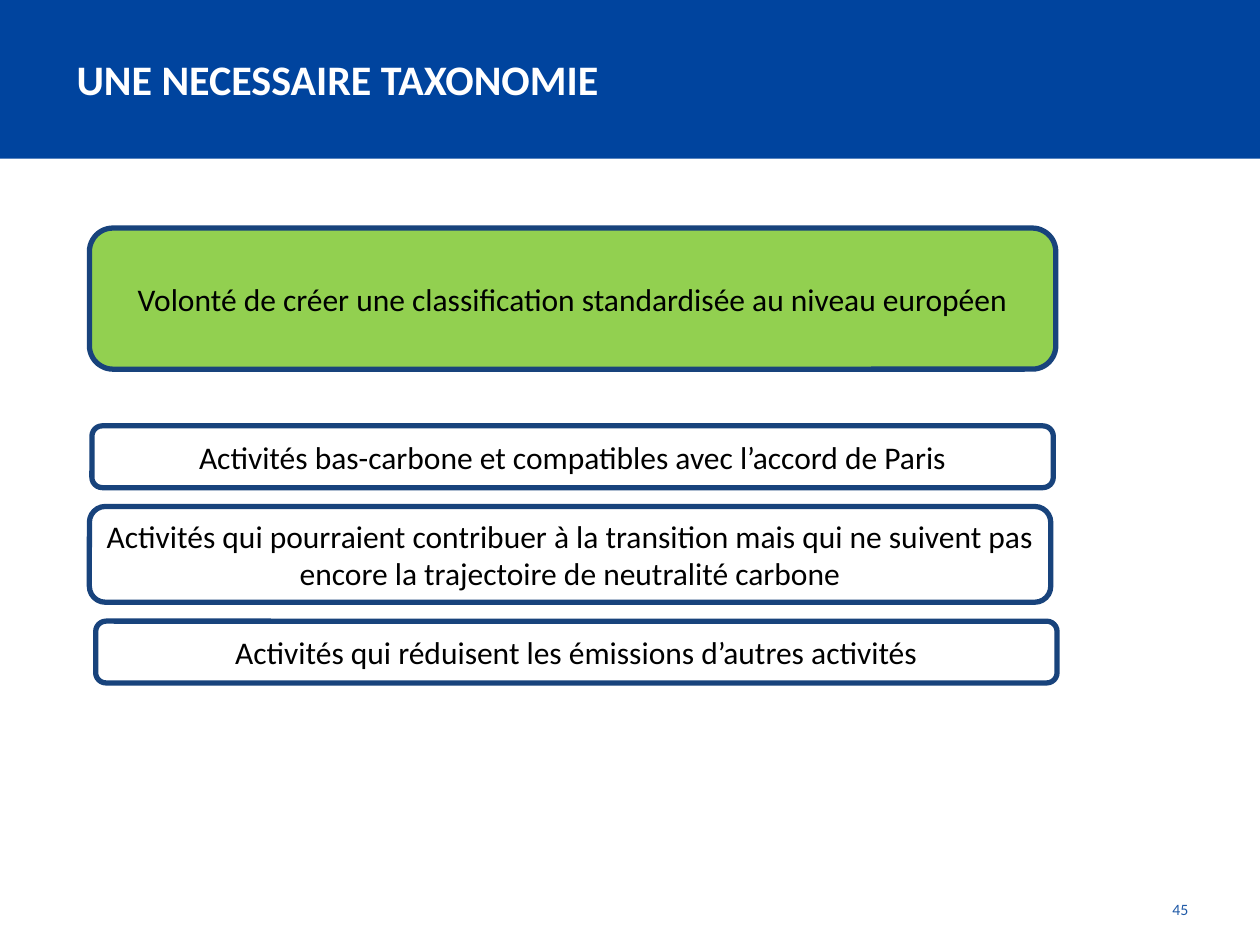
from dataclasses import dataclass

from pptx import Presentation
from pptx import util as u
from pptx.dml import color
from pptx.enum import shapes, text

FONT = "Calibri"
WHITE = "FFFFFF"
BLACK = "000000"
BLUE = "00449E"
NAVY = "18437C"
GREEN = "92D050"


@dataclass
class Box:
    label: str
    left: float
    top: float
    width: float
    height: float
    fill: str = WHITE


BOXES = [
    Box("Activités bas-carbone et compatibles avec l’accord de Paris",
        0.73, 3.38, 7.63, 0.49),
    Box("Volonté de créer une classification standardisée au niveau européen",
        0.71, 1.81, 7.67, 1.12, GREEN),
    Box("Activités qui pourraient contribuer à la transition mais qui ne suivent "
        "pas encore la trajectoire de neutralité carbone",
        0.71, 4.02, 7.63, 0.76),
    Box("Activités qui réduisent les émissions d’autres activités",
        0.76, 4.93, 7.63, 0.49),
]


def rgb(value: str) -> color.RGBColor:
    return color.RGBColor.from_string(value)


def write(sp, label: str, size: float, ink: str, align, anchor, bold: bool = False) -> None:
    tf = sp.text_frame
    tf.word_wrap = True
    tf.vertical_anchor = anchor
    p = tf.paragraphs[0]
    p.text = label
    p.alignment = align
    p.font.name = FONT
    p.font.size = u.Pt(size)
    p.font.bold = bold
    p.font.color.rgb = rgb(ink)


def add_filled(s, kind, left: float, top: float, width: float, height: float, fill: str):
    sp = s.shapes.add_shape(kind, u.Inches(left), u.Inches(top),
                            u.Inches(width), u.Inches(height))
    sp.shadow.inherit = False
    sp.fill.solid()
    sp.fill.fore_color.rgb = rgb(fill)
    return sp


def add_box(s, box: Box) -> None:
    sp = add_filled(s, shapes.MSO_SHAPE.ROUNDED_RECTANGLE, box.left, box.top,
                    box.width, box.height, box.fill)
    sp.line.color.rgb = rgb(NAVY)
    sp.line.width = u.Pt(3)
    write(sp, box.label, 18, BLACK, text.PP_ALIGN.CENTER, text.MSO_ANCHOR.MIDDLE)


def add_text(s, left: float, top: float, width: float, height: float):
    return s.shapes.add_textbox(u.Inches(left), u.Inches(top),
                                u.Inches(width), u.Inches(height))


def main() -> None:
    prs = Presentation()
    prs.slide_width = u.Inches(10)
    prs.slide_height = u.Inches(7.5)
    s = prs.slides.add_slide(prs.slide_layouts[6])

    banner = add_filled(s, shapes.MSO_SHAPE.RECTANGLE, 0, 0, 10, 1.26, BLUE)
    banner.line.fill.background()
    title = add_text(s, 0.51, 0, 9, 1.25)
    write(title, "UNE NECESSAIRE TAXONOMIE", 24, WHITE,
          text.PP_ALIGN.LEFT, text.MSO_ANCHOR.MIDDLE, bold=True)

    for box in BOXES:
        add_box(s, box)

    number = add_text(s, 8.94, 7.09, 0.59, 0.39)
    write(number, "45", 9, "205AA7", text.PP_ALIGN.RIGHT, text.MSO_ANCHOR.TOP)

    prs.save("out.pptx")


if __name__ == "__main__":
    main()
